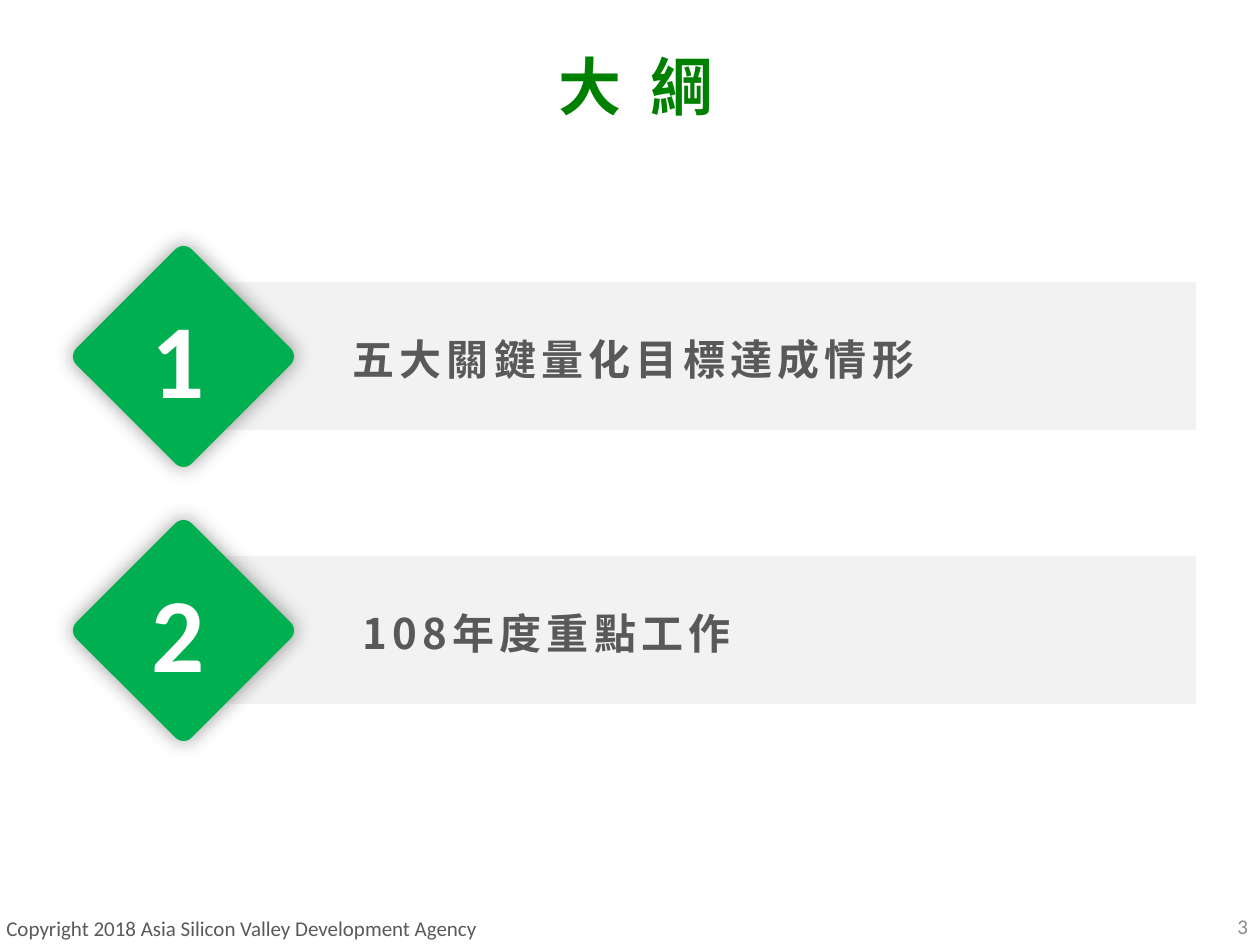
from lxml.etree import SubElement
from pptx import Presentation
from pptx.dml.color import RGBColor
from pptx.enum.shapes import MSO_SHAPE as Shape
from pptx.enum.text import MSO_ANCHOR as Anchor, PP_ALIGN as Align
from pptx.oxml.ns import qn
from pptx.util import Pt

EMU_PER_PX = 914400 / 126
GREEN = RGBColor(0x00, 0xB0, 0x50)
TITLE_GREEN = RGBColor(0x00, 0x80, 0x00)
LIGHT_GRAY = RGBColor(0xF2, 0xF2, 0xF2)
DARK_GRAY = RGBColor(0x59, 0x59, 0x59)
PAGE_GRAY = RGBColor(0x8C, 0x8C, 0x8C)
WHITE = RGBColor(0xFF, 0xFF, 0xFF)
LATIN, CJK = "Calibri", "Noto Sans CJK SC"

TITLE = [("大", 0), (" ", 8), ("綱", 0)]
COPYRIGHT = "Copyright 2018 Asia Silicon Valley Development Agency"
PAGE = "3"
TOPICS = [
    ("1", "五大關鍵量化目標達成情形", 340, 599),
    ("2", "108年度重點工作", 350, 832),
]
FIRST_TOP, PITCH = 275, 274


def px(*lengths):
    return [round(length * EMU_PER_PX) for length in lengths]


def add_run(paragraph, text, size, font, color, bold=False, spacing=0):
    run = paragraph.add_run()
    run.text = text
    run.font.size = Pt(size)
    run.font.name = font
    run.font.bold = bold
    run.font.color.rgb = color
    props = run._r.get_or_add_rPr()
    SubElement(props, qn("a:ea"), typeface=font)
    if spacing:
        props.set("spc", str(spacing * 100))


def add_text(slide, box, text, size, font, color, align=Align.LEFT,
             anchor=Anchor.MIDDLE, wrap=True, **style):
    frame = slide.shapes.add_textbox(*px(*box)).text_frame
    frame.word_wrap = wrap
    frame.vertical_anchor = anchor
    paragraph = frame.paragraphs[0]
    paragraph.alignment = align
    add_run(paragraph, text, size, font, color, **style)
    return frame


def add_block(slide, preset, box, color):
    block = slide.shapes.add_shape(preset, *px(*box))
    block.shadow.inherit = False
    block.fill.solid()
    block.fill.fore_color.rgb = color
    block.line.fill.background()
    return block


def add_glow_shadow(block):
    effects = block._element.spPr.find(qn("a:effectLst"))
    shadow = SubElement(effects, qn("a:outerShdw"), blurRad=str(Pt(12)),
                        dist="0", dir="0", algn="ctr", rotWithShape="0")
    black = SubElement(shadow, qn("a:srgbClr"), val="000000")
    SubElement(black, qn("a:alpha"), val="40000")


def add_topic(slide, top, number, label, label_left, label_width):
    add_block(slide, Shape.RECTANGLE, (144, top + 7, 1052, 148), LIGHT_GRAY)
    diamond = add_block(slide, Shape.ROUNDED_RECTANGLE, (102, top, 163, 163), GREEN)
    diamond.adjustments[0] = 0.07
    diamond.rotation = 45
    add_glow_shadow(diamond)
    add_text(slide, (88, top + 12, 181, 140), number, 60, LATIN, WHITE,
             Align.CENTER, bold=True)
    add_text(slide, (label_left, top + 52, label_width, 63), label, 24, CJK,
             DARK_GRAY, anchor=Anchor.TOP, wrap=False, bold=True, spacing=3)


def add_title(slide):
    title = slide.shapes.title
    title.left, title.top, title.width, title.height = px(93, 5, 1086, 145)
    title.text_frame.vertical_anchor = Anchor.MIDDLE
    heading = title.text_frame.paragraphs[0]
    heading.alignment = Align.CENTER
    heading.line_spacing = 1.2
    for text, spacing in TITLE:
        add_run(heading, text, 36, CJK, TITLE_GREEN, bold=True, spacing=spacing)


def main():
    deck = Presentation()
    deck.slide_width, deck.slide_height = px(1260, 945)
    slide = deck.slides.add_slide(deck.slide_layouts[5])
    add_title(slide)
    for index, topic in enumerate(TOPICS):
        add_topic(slide, FIRST_TOP + index * PITCH, *topic)
    add_text(slide, (-6, 912, 645, 33), COPYRIGHT, 12, LATIN, DARK_GRAY)
    page = add_text(slide, (1208, 907, 52, 38), PAGE, 12, LATIN, PAGE_GRAY, Align.RIGHT)
    page.margin_right = px(12)[0]
    deck.save("out.pptx")


if __name__ == "__main__":
    main()
